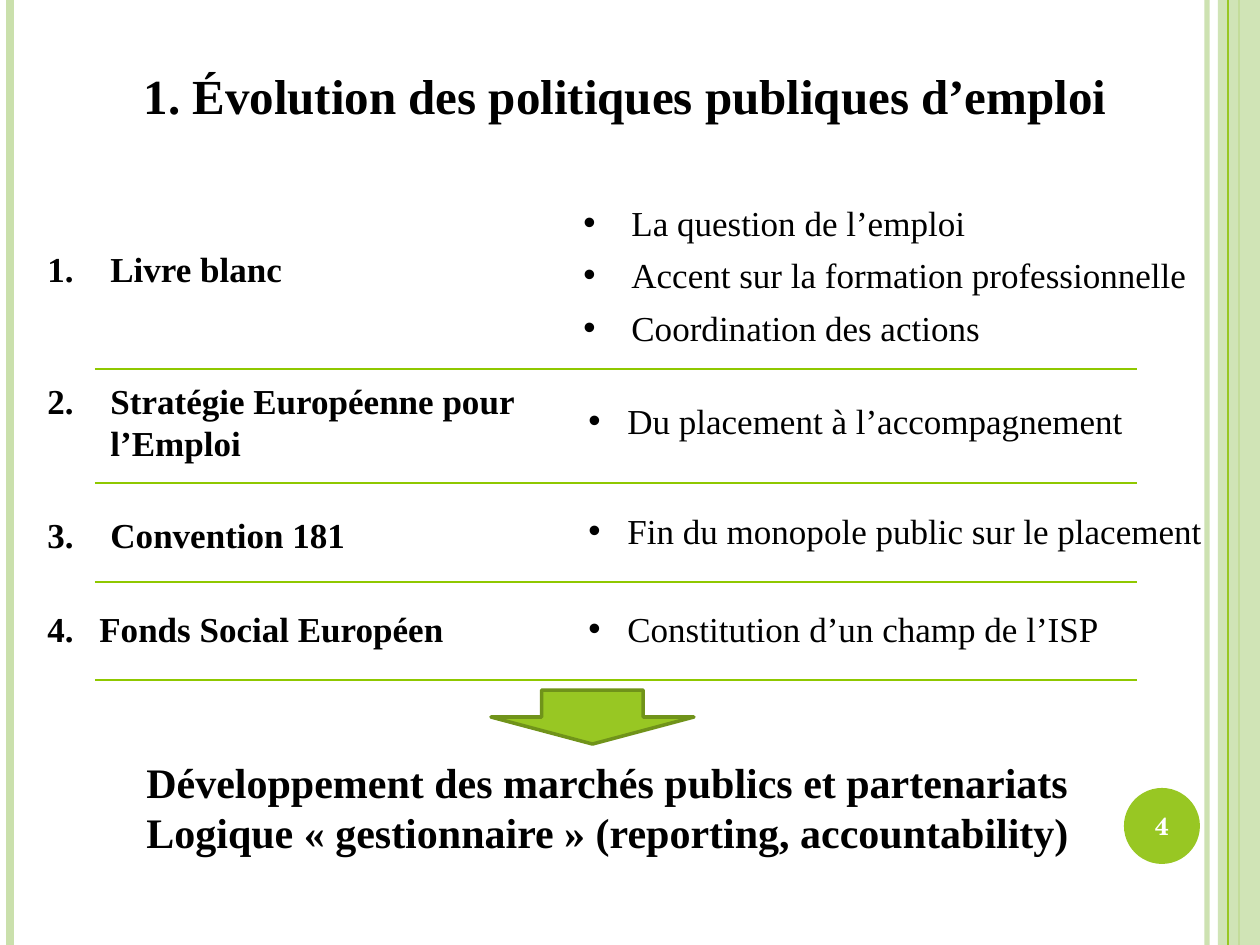
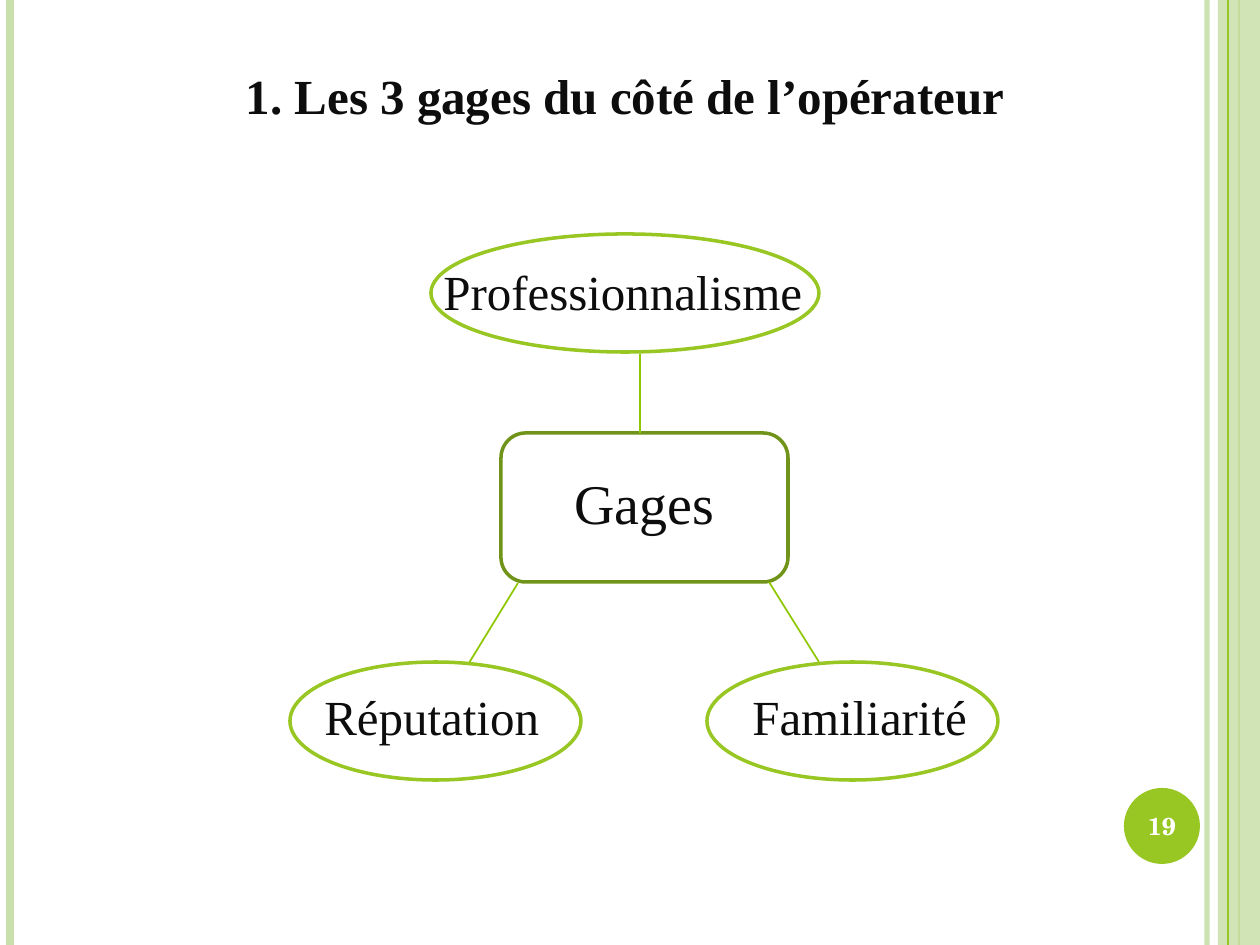
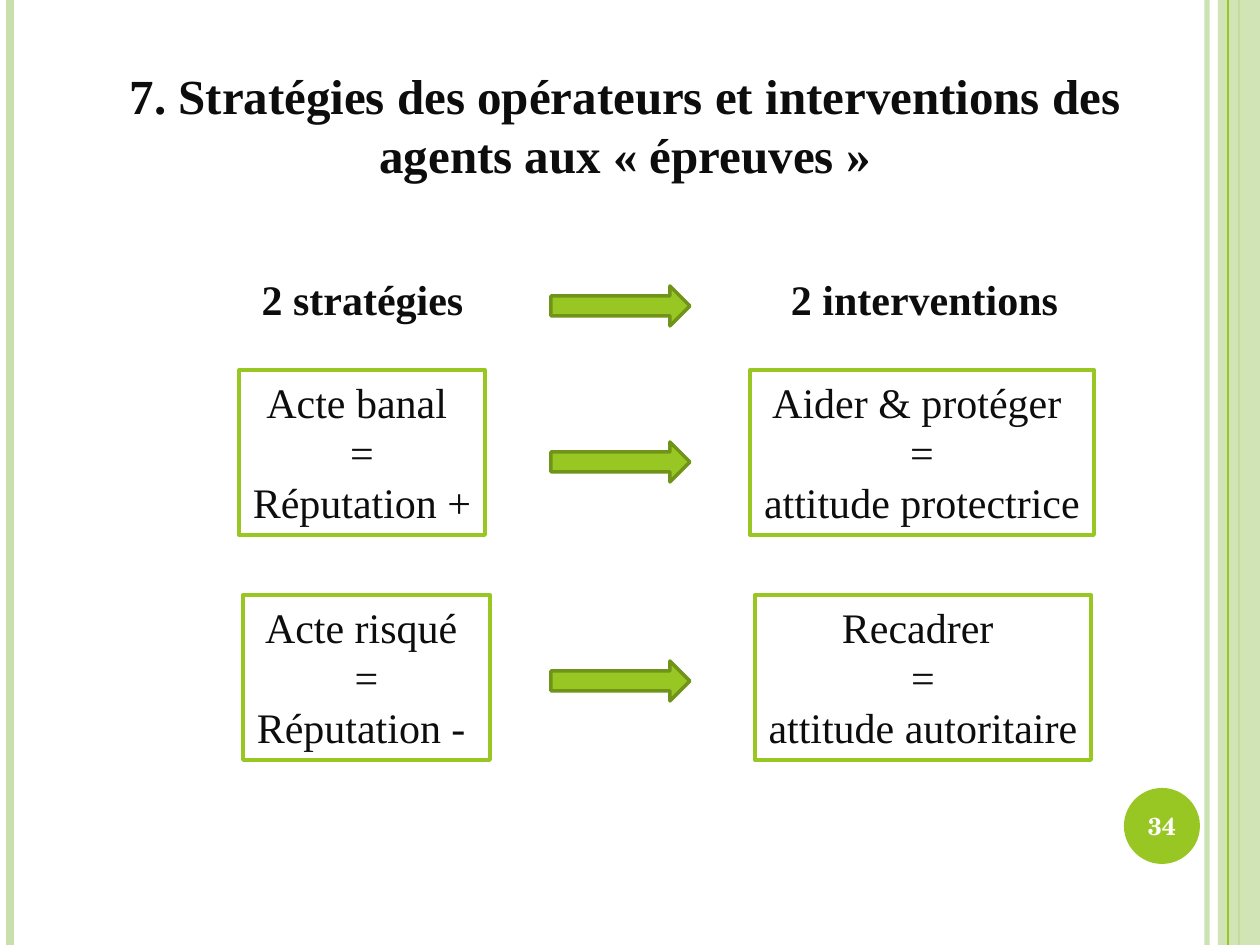
from pptx import Presentation
from pptx.dml.color import RGBColor
from pptx.enum.shapes import MSO_CONNECTOR, MSO_SHAPE as SHAPE
from pptx.enum.text import MSO_ANCHOR as ANCHOR, MSO_AUTO_SIZE as AUTO, PP_ALIGN as ALIGN
from pptx.oxml.ns import qn
from pptx.util import Pt
from lxml.etree import SubElement

PX = 914400 / 126
W, H = 1260, 945
SERIF, SCHOLA = "Times New Roman", "TeX Gyre Schola"

BLACK = RGBColor(0x00, 0x00, 0x00)
INK = RGBColor(0x0D, 0x0D, 0x0D)
WHITE = RGBColor(0xFF, 0xFF, 0xFF)
GREEN = RGBColor(0x98, 0xC7, 0x23)
DARK_GREEN = RGBColor(0x70, 0x93, 0x1A)
RULE_GREEN = RGBColor(0x8F, 0xC8, 0x00)
PALE_GREEN = RGBColor(0xCA, 0xE0, 0xAC)

# Slide 1: (label, its top, width, height, indent), (points, left, top, width, height, indent, space before)
POLICIES = [
    (("Livre blanc", 241, 318, 55, 63),
     (["La question de l’emploi", "Accent sur la formation professionnelle",
       "Coordination des actions"], 571, 195, 655, 161, 48, 6)),
    (("Stratégie Européenne pour l’Emploi", 373, 496, 97, 63),
     (["Du placement à l’accompagnement"], 576, 393, 630, 55, 39, 0)),
    (("Convention 181", 507, 407, 55, 63),
     (["Fin du monopole public sur le placement"], 576, 503, 650, 55, 39, 0)),
    (("Fonds Social Européen", 601, 507, 55, 52),
     (["Constitution d’un champ de l’ISP"], 576, 601, 630, 55, 39, 0)),
]
POLICY_RULES = [369, 483, 582, 680]
CONCLUSION = ["Développement des marchés publics et partenariats",
              "Logique « gestionnaire » (reporting, accountability)"]

# Slide 2: (name, ellipse left, top, width, text left, text top, text width)
PLEDGES = [
    ("Professionnalisme", 431, 234, 388, 431, 255, 388),
    ("Réputation", 290, 662, 291, 312, 680, 242),
    ("Familiarité", 707, 662, 291, 740, 680, 242),
]
PLEDGE_LINKS = [(640, 354, 640, 433), (518, 583, 469, 663), (769, 582, 819, 662)]

# Slide 3: (text, left, width) pairs, and (top, arrow top, pairs) for the rows of boxes
HEADINGS = [("2 stratégies", 248, 229), ("2 interventions", 777, 295)]
HEADING_ARROW = 286
STRATEGIES = [
    (370, 442, [(["Acte banal ", "=", "Réputation +"], 239, 246),
                (["Aider & protéger ", "=", "attitude protectrice"], 750, 344)]),
    (595, 661, [(["Acte risqué ", "=", "Réputation - "], 243, 247),
                (["Recadrer ", "=", "attitude autoritaire"], 755, 336)]),
]


def px(n):
    return round(n * PX)


def set_alpha(fill, percent):
    color = fill._xPr.find(".//" + qn("a:srgbClr"))
    SubElement(color, qn("a:alpha")).set("val", str(percent * 1000))


def add_line(slide, x1, y1, x2, y2, color=RULE_GREEN, width=1, alpha=None):
    c = slide.shapes.add_connector(MSO_CONNECTOR.STRAIGHT, px(x1), px(y1), px(x2), px(y2))
    c.line.color.rgb = color
    c.line.width = Pt(width)
    if alpha:
        set_alpha(c.line.fill, alpha)
    SubElement(c._element.spPr, qn("a:effectLst"))


def add_shape(slide, kind, box, fill=None, line=None, width=2):
    sp = slide.shapes.add_shape(kind, *map(px, box))
    sp.shadow.inherit = False
    if fill is None:
        sp.fill.background()
    else:
        sp.fill.solid()
        sp.fill.fore_color.rgb = fill
    if line is None:
        sp.line.fill.background()
    else:
        sp.line.color.rgb = line
        sp.line.width = Pt(width)
    return sp


def set_bullet(p, indent, number=None):
    pPr = p._p.get_or_add_pPr()
    pPr.set("marL", str(px(indent)))
    pPr.set("indent", str(-px(indent)))
    if number:
        bu = SubElement(pPr, qn("a:buAutoNum"))
        bu.set("type", "arabicPeriod")
        bu.set("startAt", str(number))
    else:
        SubElement(pPr, qn("a:buFont")).set("typeface", "Arial")
        SubElement(pPr, qn("a:buChar")).set("char", "•")


def write(sp, lines, size, color=INK, bold=False, align=ALIGN.LEFT, wrap=True, font=SERIF,
          grow=True, anchor=ANCHOR.TOP, indent=None, number=None, before=0):
    tf = sp.text_frame
    tf.word_wrap = wrap
    tf.auto_size = AUTO.SHAPE_TO_FIT_TEXT if grow else AUTO.NONE
    tf.vertical_anchor = anchor
    for i, text in enumerate(lines):
        p = tf.add_paragraph() if i else tf.paragraphs[0]
        p.alignment = align
        if before:
            p.space_before = Pt(before)
        if indent:
            set_bullet(p, indent, number)
        r = p.add_run()
        r.text = text
        r.font.name = font
        r.font.size = Pt(size)
        r.font.bold = bold
        r.font.color.rgb = color


def add_text(slide, box, lines, size, **style):
    write(slide.shapes.add_textbox(*map(px, box)), lines, size, **style)


def add_block_arrow(slide, kind, box):
    add_shape(slide, kind, box, GREEN, DARK_GREEN)


def new_slide(prs, title, number, color=INK, width=1081, height=72):
    slide = prs.slides.add_slide(prs.slide_layouts[6])
    # Side bands
    add_line(slide, 1207, 0, 1207, H, PALE_GREEN, 3, 93)
    add_line(slide, 10, 0, 10, H, PALE_GREEN, 4.5)
    add_line(slide, 1239, 0, 1239, H, GREEN, 1.5)
    band = add_shape(slide, SHAPE.RECTANGLE, (1218, 0, W - 1218, H), PALE_GREEN)
    set_alpha(band.fill, 87)
    add_line(slide, 1228, 0, 1228, H, GREEN, 0.75)
    # Page number
    add_shape(slide, SHAPE.OVAL, (1124, 788, 76, 76), GREEN)
    add_text(slide, (1120, 790, 84, 72), [str(number)], 14, color=WHITE, bold=True,
             align=ALIGN.CENTER, font=SCHOLA, grow=False, anchor=ANCHOR.MIDDLE)
    # Title, centred on one axis
    add_text(slide, (625 - width / 2, 59, width, height), [title], 28, color=color,
             bold=True, align=ALIGN.CENTER)
    return slide


def build_policies(prs):
    slide = new_slide(prs, "1. Évolution des politiques publiques d’emploi", 4, BLACK, 1022)
    for y in POLICY_RULES:
        add_line(slide, 95, y, 1137, y)
    for n, (label, points) in enumerate(POLICIES, 1):
        name, top, width, height, indent = label
        add_text(slide, (35, top, width, height), [name], 20, color=BLACK, bold=True,
                 indent=indent, number=n)
        lines, *box, indent, before = points
        add_text(slide, box, lines, 20, color=BLACK, indent=indent, before=before)
    add_block_arrow(slide, SHAPE.DOWN_ARROW, (491, 690, 203, 54))
    add_text(slide, (134, 750, 953, 115), CONCLUSION, 24, color=BLACK, bold=True)


def build_pledges(prs):
    slide = new_slide(prs, "1. Les 3 gages du côté de l’opérateur", 19)
    add_shape(slide, SHAPE.ROUNDED_RECTANGLE, (501, 433, 287, 149), line=DARK_GREEN)
    add_text(slide, (562, 462, 168, 81), ["Gages"], 32, wrap=False)
    for link in PLEDGE_LINKS:
        add_line(slide, *link)
    for name, left, top, width, text_left, text_top, text_width in PLEDGES:
        add_shape(slide, SHAPE.OVAL, (left, top, width, 118), line=GREEN)
        add_text(slide, (text_left, text_top, text_width, 72), [name], 28, wrap=False)


def build_strategies(prs):
    slide = new_slide(prs, "7. Stratégies des opérateurs et interventions des agents "
                           "aux « épreuves »", 34, height=131)
    for text, left, width in HEADINGS:
        add_text(slide, (left, 267, width, 63), [text], 24, bold=True,
                 align=ALIGN.CENTER, wrap=False)
    for top, _, boxes in STRATEGIES:
        for lines, left, width in boxes:
            sp = add_shape(slide, SHAPE.RECTANGLE, (left, top, width, 165), line=GREEN, width=2.25)
            write(sp, lines, 24, align=ALIGN.CENTER, wrap=False)
    for y in [HEADING_ARROW] + [row[1] for row in STRATEGIES]:
        add_block_arrow(slide, SHAPE.RIGHT_ARROW, (551, y, 139, 40))


def main():
    prs = Presentation()
    prs.slide_width, prs.slide_height = px(W), px(H)
    build_policies(prs)
    build_pledges(prs)
    build_strategies(prs)
    prs.save("out.pptx")


if __name__ == "__main__":
    main()
